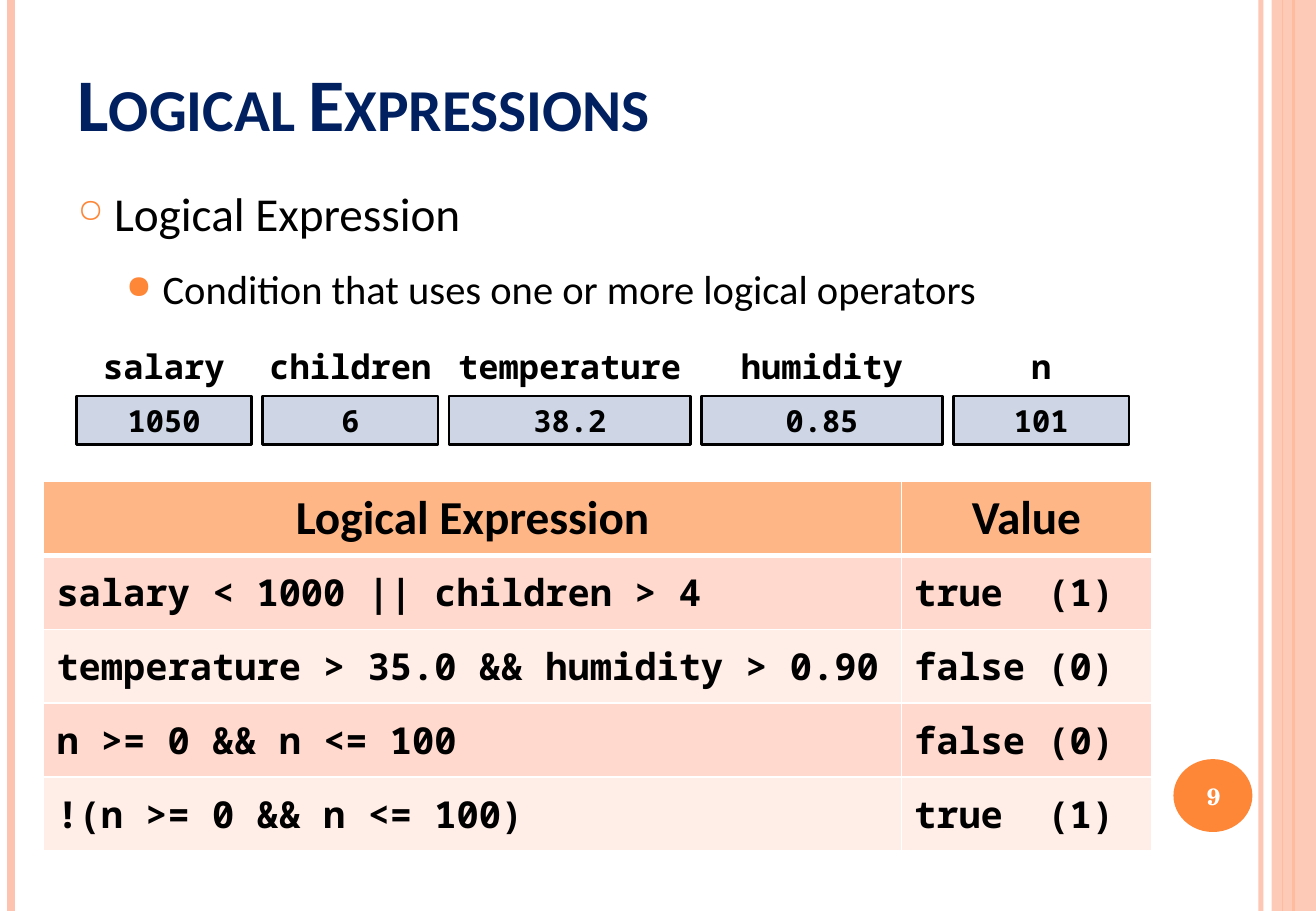
"""Build a slide on logical expressions with variable boxes and a truth table."""
from dataclasses import dataclass

from lxml import etree
from pptx import Presentation
from pptx.dml.color import RGBColor
from pptx.enum.shapes import MSO_CONNECTOR, MSO_SHAPE
from pptx.enum.text import MSO_ANCHOR, PP_ALIGN
from pptx.oxml.ns import qn
from pptx.util import Pt

LEFT, CENTER = PP_ALIGN.LEFT, PP_ALIGN.CENTER
TOP, MIDDLE, BOTTOM = MSO_ANCHOR.TOP, MSO_ANCHOR.MIDDLE, MSO_ANCHOR.BOTTOM
RECTANGLE, OVAL = MSO_SHAPE.RECTANGLE, MSO_SHAPE.OVAL
STRAIGHT = MSO_CONNECTOR.STRAIGHT


@dataclass(frozen=True)
class Theme:
    """Hold the fonts, colours and type sizes of the slide."""
    sans: str = "Calibri"
    mono: str = "Noto Sans Mono"
    serif: str = "TeX Gyre Schola"
    navy: str = "002060"
    black: str = "000000"
    white: str = "FFFFFF"
    orange: str = "FE8637"
    peach: str = "FEC3AE"
    header: str = "FEB687"
    bands: tuple = ("FFD9CE", "FFEDE8")
    value_box: str = "CED6E6"
    title_size: int = 44
    heading_size: int = 28
    detail_size: int = 24
    code_size: int = 22
    name_size: int = 20
    value_size: int = 18
    number_size: int = 14


THEME = Theme()
WIDTH, HEIGHT = 780, 540

TITLE = "Logical Expressions"
BULLETS = [
    ("Logical Expression", THEME.heading_size, "○", 70, 21.6),
    ("Condition that uses one or more logical operators",
     THEME.detail_size, "●", 80, 50.4),
]
VARIABLES = [
    ("salary", "1050", 104),
    ("children", "6", 104),
    ("temperature", "38.2", 143),
    ("humidity", "0.85", 143),
    ("n", "101", 104),
]
TABLE_ROWS = [
    ("Logical Expression", "Value"),
    ("salary < 1000 || children > 4", "true  (1)"),
    ("temperature > 35.0 && humidity > 0.90", "false (0)"),
    ("n >= 0 && n <= 100", "false (0)"),
    ("!(n >= 0 && n <= 100)", "true  (1)"),
]
SLIDE_NUMBER = "9"
RULES = [
    (747.4, 3, THEME.peach, 93),
    (6.5, 4.5, THEME.peach, 100),
    (766.8, 1.5, THEME.orange, 100),
    (760.3, 0.75, THEME.orange, 100),
]
STRIPE_LEFT, STRIPE_OPACITY = 753.8, 87
VARIABLE_LEFT, VARIABLE_GAP = 45.2, 6.5
NAME_TOP, NAME_HEIGHT, VALUE_TOP, VALUE_HEIGHT = 205.2, 23.8, 234.7, 28.8
TABLE_LEFT, TABLE_TOP, ROW_HEIGHT = 25.9, 285.4, 43.8
COLUMN_WIDTHS = (508.3, 148.3)
BULLET_INDENT = 21.6


def color(value):
    return RGBColor.from_string(value)


def set_opacity(fill_parent, percent):
    tint = next(fill_parent.iter(qn("a:srgbClr")))
    etree.SubElement(tint, qn("a:alpha"), val=str(percent * 1000))


def add_run(paragraph, text, font, size, tint, bold=True):
    run = paragraph.add_run()
    run.text = text
    run.font.name, run.font.size, run.font.bold = font, Pt(size), bold
    run.font.color.rgb = color(tint)
    return run


def add_box(shapes, kind, box, fill, outline=None):
    shape = shapes.add_shape(kind, *map(Pt, box))
    shape.shadow.inherit = False
    shape.fill.solid()
    shape.fill.fore_color.rgb = color(fill)
    if outline:
        shape.line.color.rgb = color(outline)
        shape.line.width = Pt(1.5)
    else:
        shape.line.fill.background()
    return shape


def add_text_box(slide, box, anchor):
    frame = slide.shapes.add_textbox(*map(Pt, box)).text_frame
    frame.word_wrap = True
    frame.vertical_anchor = anchor
    return frame


def add_rule(slide, x, width, tint, opacity):
    rule = slide.shapes.add_connector(STRAIGHT, Pt(x), 0, Pt(x), Pt(HEIGHT))
    rule.line.width = Pt(width)
    rule.line.color.rgb = color(tint)
    properties = rule._element.spPr
    if opacity < 100:
        set_opacity(properties, opacity)
    etree.SubElement(properties, qn("a:effectLst"))


def add_decoration(slide):
    for rule in RULES:
        add_rule(slide, *rule)
    stripe_box = (STRIPE_LEFT, 0, WIDTH - STRIPE_LEFT, HEIGHT)
    stripe = add_box(slide.shapes, RECTANGLE, stripe_box, THEME.peach)
    set_opacity(stripe._element.spPr, STRIPE_OPACITY)
    add_box(slide.shapes, OVAL, (695.5, 450, 46.8, 43.2), THEME.orange)
    paragraph = add_text_box(slide, (693.4, 451.4, 51.8, 41), MIDDLE).paragraphs[0]
    paragraph.alignment = CENTER
    add_run(paragraph, SLIDE_NUMBER, THEME.serif, THEME.number_size, THEME.white)


def add_title(slide):
    frame = add_text_box(slide, (38.9, 21.6, 637.2, 68.4), BOTTOM)
    run = add_run(frame.paragraphs[0], TITLE, THEME.sans, THEME.title_size, THEME.navy)
    run.font._element.set("cap", "small")


def add_bullets(slide):
    frame = add_text_box(slide, (38.9, 95.8, 702, 95.8), TOP)
    for index, (text, size, mark, scale, margin) in enumerate(BULLETS):
        paragraph = frame.add_paragraph() if index else frame.paragraphs[0]
        paragraph.level = index
        paragraph.line_spacing, paragraph.space_before = 1.3, Pt(5)
        properties = paragraph._p.get_or_add_pPr()
        properties.set("marL", str(Pt(margin)))
        properties.set("indent", str(-Pt(BULLET_INDENT)))
        tint = etree.SubElement(properties, qn("a:buClr"))
        etree.SubElement(tint, qn("a:srgbClr"), val=THEME.orange)
        etree.SubElement(properties, qn("a:buSzPct"), val=str(scale * 1000))
        etree.SubElement(properties, qn("a:buChar"), char=mark)
        add_run(paragraph, text, THEME.sans, size, THEME.black, bold=False)


def add_variables(slide):
    left = VARIABLE_LEFT
    for name, value, width in VARIABLES:
        group = slide.shapes.add_group_shape()
        parts = [
            (value, VALUE_TOP, VALUE_HEIGHT, THEME.value_box, THEME.black, THEME.value_size),
            (name, NAME_TOP, NAME_HEIGHT, THEME.white, None, THEME.name_size),
        ]
        for text, top, height, fill, outline, size in parts:
            box = (left, top, width, height)
            frame = add_box(group.shapes, RECTANGLE, box, fill, outline).text_frame
            frame.margin_left = frame.margin_right = 0
            frame.margin_top = frame.margin_bottom = 0
            frame.word_wrap, frame.vertical_anchor = True, MIDDLE
            frame.paragraphs[0].alignment = CENTER
            add_run(frame.paragraphs[0], text, THEME.mono, size, THEME.black)
        left += width + VARIABLE_GAP


def set_borders(cell, row):
    widths = {"L": 1, "R": 1, "T": 3 if row == 1 else 1, "B": 3 if row == 0 else 1}
    properties = cell._tc.get_or_add_tcPr()
    for position, (side, width) in enumerate(widths.items()):
        border = etree.Element(qn(f"a:ln{side}"), w=str(Pt(width)))
        fill = etree.SubElement(border, qn("a:solidFill"))
        etree.SubElement(fill, qn("a:srgbClr"), val=THEME.white)
        properties.insert(position, border)


def add_truth_table(slide):
    size = (sum(COLUMN_WIDTHS), ROW_HEIGHT * len(TABLE_ROWS))
    box = map(Pt, (TABLE_LEFT, TABLE_TOP, *size))
    table = slide.shapes.add_table(len(TABLE_ROWS), len(COLUMN_WIDTHS), *box).table
    table.horz_banding = False
    for column, width in zip(table.columns, COLUMN_WIDTHS):
        column.width = Pt(width)
    for row, texts in enumerate(TABLE_ROWS):
        table.rows[row].height = Pt(ROW_HEIGHT)
        if row == 0:
            fill, font, size, alignment = THEME.header, THEME.sans, THEME.heading_size, CENTER
        else:
            fill, font, size, alignment = THEME.bands[(row - 1) % 2], THEME.mono, THEME.code_size, LEFT
        for column, text in enumerate(texts):
            cell = table.cell(row, column)
            cell.vertical_anchor = MIDDLE
            cell.margin_left = cell.margin_right = Pt(7.6)
            cell.fill.solid()
            cell.fill.fore_color.rgb = color(fill)
            set_borders(cell, row)
            paragraph = cell.text_frame.paragraphs[0]
            paragraph.alignment = alignment
            add_run(paragraph, text, font, size, THEME.black)


presentation = Presentation()
presentation.slide_width, presentation.slide_height = Pt(WIDTH), Pt(HEIGHT)
slide = presentation.slides.add_slide(presentation.slide_layouts[6])
for add_part in (add_decoration, add_title, add_bullets, add_truth_table, add_variables):
    add_part(slide)
presentation.save("out.pptx")
